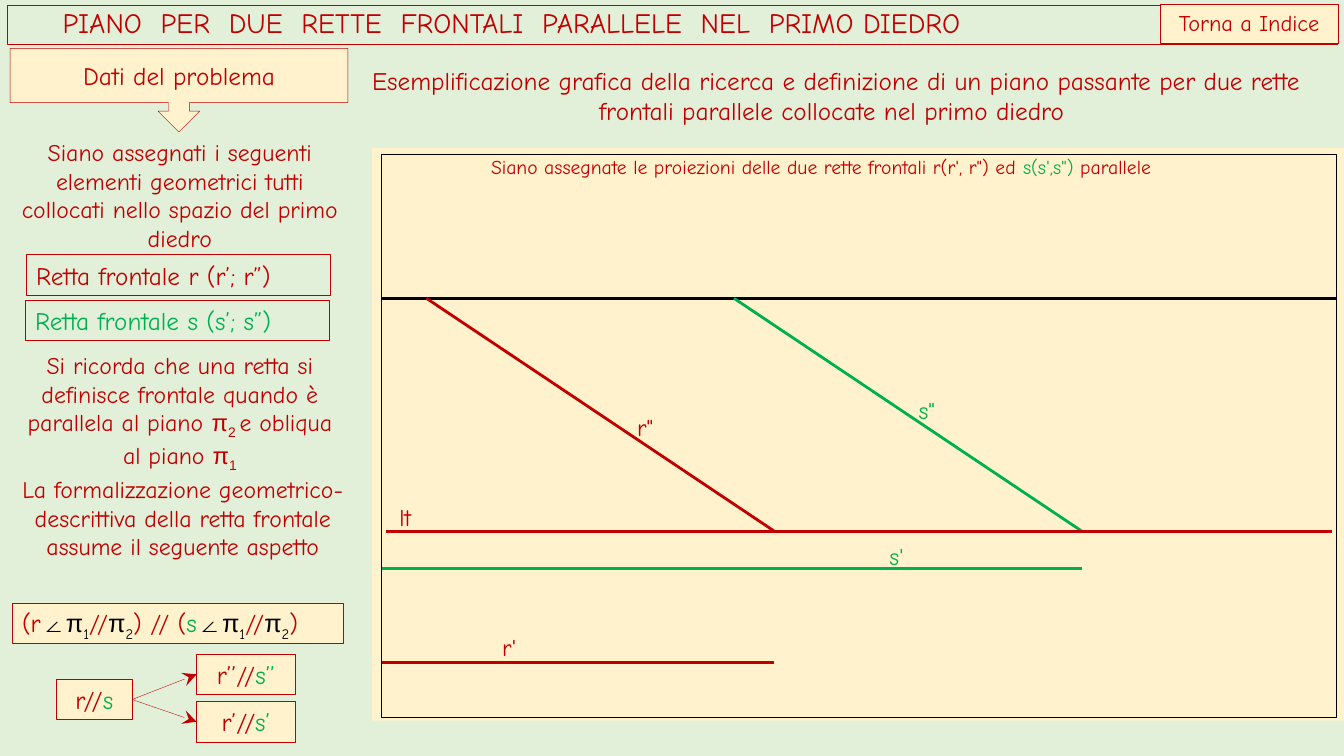
import pptx
import pptx.util
import pptx.dml.color
import pptx.enum.shapes
import pptx.enum.text
import pptx.oxml
import pptx.oxml.ns

Inch = pptx.util.Inches
Point = pptx.util.Pt
Kind = pptx.enum.shapes.MSO_SHAPE
Align = pptx.enum.text.PP_ALIGN
Anchor = pptx.enum.text.MSO_ANCHOR
Fit = pptx.enum.text.MSO_AUTO_SIZE

WIDE, HIGH = 13.33, 7.5
RED, GREEN, BLACK = "C00000", "00B050", "000000"
CREAM, MINT = "FFF2CC", "E2F0D9"
FONT, GREEK = "Comic Neue", "Arial"

# Run styles: colour, font, baseline
STYLES = {
    "red": (RED, FONT, 0), "green": (GREEN, FONT, 0),
    "pi": (RED, GREEK, 0), "sub": (RED, GREEK, -25000),
    "dark": (BLACK, GREEK, 0), "low": (BLACK, FONT, -25000),
}

# Content: runs are (text, style)
TITLE = "PIANO  PER  DUE  RETTE  FRONTALI  PARALLELE  NEL  PRIMO DIEDRO"
DATA = [("Dati del problema", "red")]
INDEX = [("Torna a Indice", "red")]
INTRO = [("Esemplificazione grafica della ricerca e definizione di un piano passante "
          "per due rette frontali parallele collocate nel primo diedro ", "red")]
NOTES = [  # top, left, runs
    (1.32, 0.07, [("Siano assegnati i seguenti elementi geometrici tutti collocati "
                   "nello spazio del primo diedro", "red")]),
    (3.43, 0.07, [("Si ricorda che una retta si definisce frontale quando è parallela "
                   "al piano ", "red"), ("π", "pi"), ("2 ", "sub"),
                  ("e obliqua al piano ", "red"), ("π", "pi"), ("1", "sub")]),
    (4.66, 0.1, [("La formalizzazione geometrico-descrittiva della retta frontale "
                  "assume il seguente aspetto", "red")]),
]
GIVEN = [(0.26, 2.53, [("Retta frontale r (r’; r”)", "red")]),
         (0.25, 2.98, [("Retta frontale s (s’; s”)", "green")])]
PLANES = [("∠π", "dark"), ("1", "low"), ("//", "red"), ("π", "dark"), ("2", "low")]
RULE = [("(r", "red"), *PLANES, (") // (", "red"), ("s", "green"), *PLANES, (")", "red")]
ROOT = [("r//", "red"), ("s", "green")]
LEAVES = [(6.49, [("r’’//", "red"), ("s’’", "green")]),
          (6.96, [("r’//", "red"), ("s’", "green")])]
CAPTION = [("Siano assegnate le proiezioni delle due rette frontali r(r', r\") ed ", "red"),
           ("s(s',s\") ", "green"), ("parallele", "red")]

# Drawing frame and its levels
LEFT, TOP, SPAN, DEEP = 3.78, 1.53, 9.48, 5.59
RIGHT = LEFT + SPAN
UPPER, GROUND = 2.96, 5.27
RUN = 3.45  # horizontal reach of each oblique line
LINES = [(4.23, 6.57, RED), (7.28, 5.64, GREEN)]  # start, lower level, colour
LABELS = [("r\"", 6.32, 4.09, "red"), ("r'", 4.98, 6.28, "red"),
          ("s\"", 9.11, 3.93, "green"), ("s'", 8.82, 5.37, "green"),
          ("lt", 3.96, 4.99, "red")]

deck = pptx.Presentation()
deck.slide_width, deck.slide_height = Inch(WIDE), Inch(HIGH)
slide = deck.slides.add_slide(deck.slide_layouts[5])
shapes = slide.shapes


def color(text):
    return pptx.dml.color.RGBColor.from_string(text)


def paint(fill, tint):
    if tint:
        fill.solid()
        fill.fore_color.rgb = color(tint)
    else:
        fill.background()


def edge(line, tint, width):
    paint(line.fill, tint)
    if tint:
        line.width = Point(width)


def write(shape, runs, size, align=Align.CENTER, anchor=Anchor.TOP, fit=Fit.SHAPE_TO_FIT_TEXT):
    frame = shape.text_frame
    frame.word_wrap, frame.auto_size = True, fit
    frame.vertical_anchor = anchor
    para = frame.paragraphs[0]
    para.alignment, para.font.size = align, Point(size)
    for text, style in runs:
        tint, face, base = STYLES[style]
        run = para.add_run()
        run.text, run.font.name = text, face
        run.font.color.rgb = color(tint)
        if base:
            run.font._element.set("baseline", str(base))
    return frame


def box(x, y, w, h, fill=None, line=RED, width=0.25, kind=Kind.RECTANGLE):
    shape = shapes.add_shape(kind, Inch(x), Inch(y), Inch(w), Inch(h))
    shape.shadow.inherit = False
    paint(shape.fill, fill)
    edge(shape.line, line, width)
    return shape


def area(x, y, w, h):
    return shapes.add_textbox(Inch(x), Inch(y), Inch(w), Inch(h))


def label(x, y, w, h, runs, size):
    frame = write(area(x, y, w, h), runs, size, Align.LEFT)
    frame.word_wrap = False
    frame.margin_left = frame.margin_right = frame.margin_top = frame.margin_bottom = 0


def rule(x1, y1, x2, y2, tint, width=0):
    line = shapes.add_connector(pptx.enum.shapes.MSO_CONNECTOR.STRAIGHT,
                                Inch(x1), Inch(y1), Inch(x2), Inch(y2))
    edge(line.line, tint, width)
    line._element.spPr.append(pptx.oxml.parse_xml(
        "<a:effectLst %s/>" % pptx.oxml.ns.nsdecls("a")))
    return line


def arrow(start, end):
    line = rule(0, 0, 1, 1, RED, 0.25)
    line.begin_connect(start, 3)
    line.end_connect(end, 1)
    line.line._get_or_add_ln().append(pptx.oxml.parse_xml(
        '<a:tailEnd type="stealth" w="lg" len="lg" %s/>' % pptx.oxml.ns.nsdecls("a")))


# Background and heading
paint(slide.background.fill, MINT)
title = shapes.title
title.left, title.top, title.width, title.height = Inch(0.07), Inch(0.05), Inch(13.19), Inch(0.39)
edge(title.line, RED, 0.25)
head = write(title, [(TITLE, "red")], 20, Align.LEFT, Anchor.MIDDLE, Fit.NONE)
head.margin_left = Inch(0.55)
head.paragraphs[0].line_spacing = 0.9

write(box(0.1, 0.48, 3.35, 0.83, CREAM, kind=Kind.DOWN_ARROW_CALLOUT), DATA, 18,
      anchor=Anchor.MIDDLE, fit=Fit.NONE)
write(box(11.51, 0.04, 1.76, 0.39, CREAM), INDEX, 16)
write(area(3.37, 0.6, 9.84, 0.71), INTRO, 18)

# Left column
for y, x, runs in NOTES:
    write(area(x, y, 3.43, 1.25), runs, 17)
for x, y, runs in GIVEN:
    write(box(x, y, 3.02, 0.4, width=0.75), runs, 18, Align.LEFT)
write(box(0.12, 5.98, 3.28, 0.4, CREAM), RULE, 18, Align.LEFT)

# Branching relation
root = box(0.56, 6.74, 0.75, 0.4, CREAM)
write(root, ROOT, 18)
for y, runs in LEAVES:
    leaf = box(1.95, y, 0.98, 0.4, CREAM)
    write(leaf, runs, 18)
    arrow(root, leaf)

# Projection drawing
box(3.69, 1.47, 9.65, 5.68, CREAM, None)
label(4.87, 1.54, 7.39, 0.24, CAPTION, 14)
for text, x, y, style in LABELS:
    label(x, y, 0.22, 0.29, [(text, style)], 17)
rule(LEFT, UPPER, RIGHT, UPPER, BLACK)
for x, low, tint in LINES:
    rule(x, UPPER, x + RUN, GROUND, tint)
    rule(LEFT, low, x + RUN, low, tint)
box(LEFT, TOP, SPAN, DEEP, None, BLACK, 0)
rule(LEFT + 0.05, GROUND, RIGHT - 0.05, GROUND, RED)

deck.save("out.pptx")
